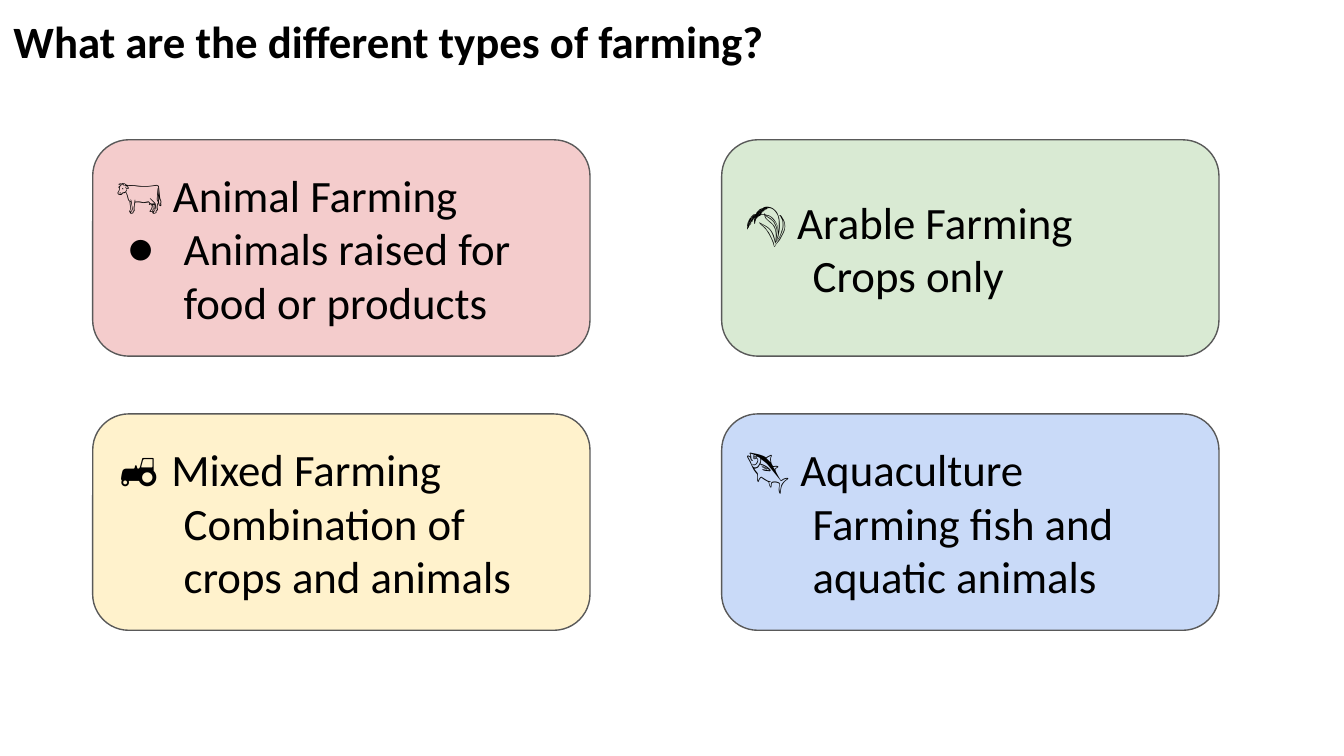
from dataclasses import dataclass

from pptx import Presentation
from pptx.dml.color import RGBColor
from pptx.enum.shapes import MSO_SHAPE as Shape
from pptx.enum.text import MSO_ANCHOR as Anchor, MSO_AUTO_SIZE as AutoSize, PP_ALIGN as Align
from pptx.oxml.ns import qn
from pptx.util import Inches, Pt
from lxml.etree import SubElement


@dataclass(frozen=True)
class Theme:
    font: str = "Calibri"
    size: float = 24
    text: str = "000000"
    outline: str = "595959"
    outline_width: float = 0.75
    pink: str = "F4CCCC"
    green: str = "D9EAD3"
    yellow: str = "FFF2CC"
    blue: str = "C9DAF8"


@dataclass(frozen=True)
class Grid:
    left: float = 0.69
    top: float = 1.04
    width: float = 3.7
    height: float = 1.61
    column_step: float = 4.68
    row_step: float = 2.04


@dataclass(frozen=True)
class Card:
    column: int
    row: int
    fill: str
    heading: str
    detail: str
    bullet: str = ""


THEME = Theme()
GRID = Grid()
SLIDE_WIDTH = 10
SLIDE_HEIGHT = SLIDE_WIDTH * 9 / 16
INDENT, HANGING = 0.5, -0.42
CARDS = [
    Card(0, 0, THEME.pink, "🐄 Animal Farming", "Animals raised for food or products", "●"),
    Card(1, 0, THEME.green, "🌾 Arable Farming", "Crops only"),
    Card(0, 1, THEME.yellow, "🚜 Mixed Farming", "Combination of crops and animals"),
    Card(1, 1, THEME.blue, "🐟 Aquaculture", "Farming fish and aquatic animals"),
]


def set_frame(tf, anchor: Anchor) -> None:
    margin = Inches(0.1)
    settings = dict(margin_left=margin, margin_top=margin, margin_right=margin,
                    margin_bottom=margin, word_wrap=True,
                    auto_size=AutoSize.NONE, vertical_anchor=anchor)
    for name, value in settings.items():
        setattr(tf, name, value)


def write(p, text: str, bold: bool = False) -> None:
    p.alignment = Align.LEFT
    r = p.add_run()
    r.text = text
    for name, value in dict(name=THEME.font, size=Pt(THEME.size), bold=bold).items():
        setattr(r.font, name, value)
    r.font.color.rgb = RGBColor.from_string(THEME.text)


def indent(p, bullet: str) -> None:
    """Indent a paragraph, hanging its first line when it has a bullet."""
    pPr = p._p.get_or_add_pPr()
    pPr.set("marL", str(Inches(INDENT)))
    pPr.set("indent", str(Inches(HANGING) if bullet else 0))
    if bullet:
        color = SubElement(pPr, qn("a:buClr"))
        SubElement(color, qn("a:srgbClr"), val=THEME.text)
        SubElement(pPr, qn("a:buFont"), typeface=THEME.font)
        SubElement(pPr, qn("a:buChar"), char=bullet)


def add_title(slide, text: str) -> None:
    sp = slide.shapes.title
    sp.left, sp.top, sp.width, sp.height = 0, 0, Inches(9.95), Inches(0.61)
    set_frame(sp.text_frame, Anchor.TOP)
    write(sp.text_frame.paragraphs[0], text, bold=True)


def add_card(slide, card: Card) -> None:
    left = GRID.left + card.column * GRID.column_step
    top = GRID.top + card.row * GRID.row_step
    sp = slide.shapes.add_shape(Shape.ROUNDED_RECTANGLE, Inches(left), Inches(top),
                                Inches(GRID.width), Inches(GRID.height))
    sp.shadow.inherit = False
    sp.fill.solid()
    sp.fill.fore_color.rgb = RGBColor.from_string(card.fill)
    sp.line.color.rgb = RGBColor.from_string(THEME.outline)
    sp.line.width = Pt(THEME.outline_width)
    tf = sp.text_frame
    set_frame(tf, Anchor.MIDDLE)
    write(tf.paragraphs[0], card.heading)
    p = tf.add_paragraph()
    indent(p, card.bullet)
    write(p, card.detail)


def main() -> None:
    prs = Presentation()
    prs.slide_width, prs.slide_height = Inches(SLIDE_WIDTH), Inches(SLIDE_HEIGHT)
    slide = prs.slides.add_slide(prs.slide_layouts.get_by_name("Title Only"))
    add_title(slide, "What are the different types of farming?")
    for card in CARDS:
        add_card(slide, card)
    prs.save("out.pptx")


if __name__ == "__main__":
    main()
